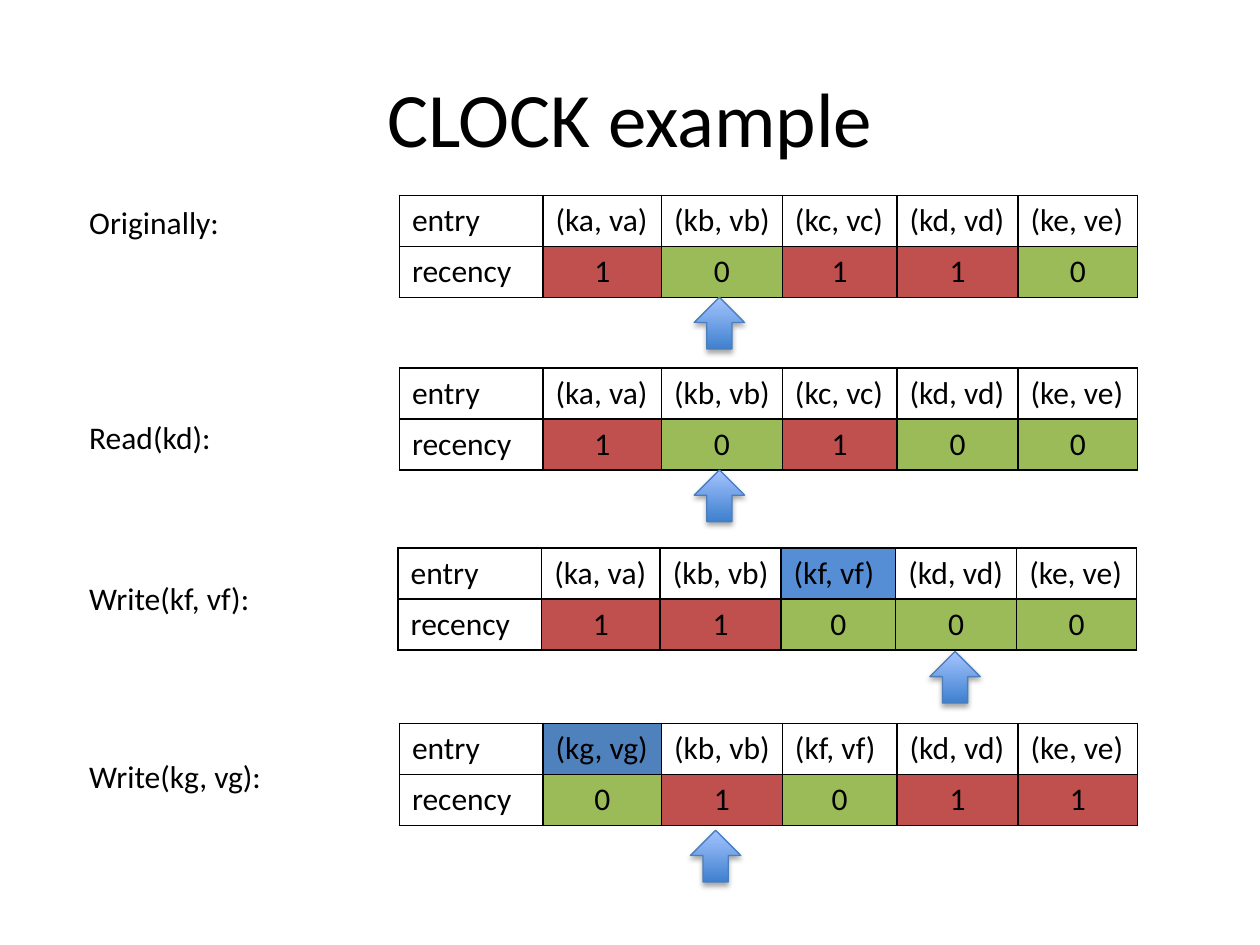
from lxml import etree
from pptx import Presentation
from pptx import util as u
from pptx.dml import color
from pptx.enum import shapes, text
from pptx.oxml import ns

# Content: step label, label top, table corner, entries, recency bits,
# index of the newly written entry with its fill, and pointer corner
STEPS = [
    ("Originally:", 1.56, (3.17, 1.55), "abcde", "10110", None, (5.51, 2.36)),
    ("Read(kd):", 3.27, (3.17, 2.92), "abcde", "10100", None, (5.51, 3.73)),
    ("Write(kf, vf):", 4.55, (3.16, 4.35), "abfde", "11000", (2, "558ED5"), (7.38, 5.17)),
    ("Write(kg, vg):", 5.96, (3.17, 5.74), "gbfde", "01011", (0, "4F81BD"), (5.48, 6.59)),
]
LABEL_WIDTHS = [1.24, 1.19, 1.51, 1.59]
COLUMNS = [1.14, 0.94, 0.96, 0.91, 0.96, 0.95]
ROW_HEIGHT = 0.405
RECENCY_FILL = {"0": "9BBB59", "1": "C0504D"}
BLACK = "000000"


def rgb(value):
    return color.RGBColor.from_string(value)


def write(frame, words, size=18, align=text.PP_ALIGN.LEFT):
    para = frame.paragraphs[0]
    para.alignment = align
    span = para.add_run()
    span.text = words
    for name, value in {"name": "Calibri", "size": u.Pt(size), "bold": False}.items():
        setattr(span.font, name, value)
    span.font.color.rgb = rgb(BLACK)


def add_borders(cell):
    props = cell._tc.get_or_add_tcPr()
    for place, side in enumerate(("lnL", "lnR", "lnT", "lnB")):
        line = etree.fromstring(
            f'<a:{side} {ns.nsdecls("a")} w="12700"><a:solidFill>'
            f'<a:srgbClr val="{BLACK}"/></a:solidFill></a:{side}>')
        props.insert(place, line)


def add_cache(page, corner, letters, bits, written):
    rows = [["entry"] + [f"(k{c}, v{c})" for c in letters], ["recency", *bits]]
    frame = page.shapes.add_table(
        2, len(COLUMNS), *map(u.Inches, corner),
        u.Inches(sum(COLUMNS)), u.Inches(2 * ROW_HEIGHT))
    table = frame.table
    table.first_row = table.horz_banding = False
    for column, width in zip(table.columns, COLUMNS):
        column.width = u.Inches(width)
    for r, row in enumerate(rows):
        table.rows[r].height = u.Inches(ROW_HEIGHT)
        for c, words in enumerate(row):
            cell = table.cell(r, c)
            fill = RECENCY_FILL.get(words)
            align = text.PP_ALIGN.CENTER if fill else text.PP_ALIGN.LEFT
            if written and (r, c) == (0, written[0] + 1):
                fill = written[1]
            if fill:
                cell.fill.solid()
                cell.fill.fore_color.rgb = rgb(fill)
            else:
                cell.fill.background()
            write(cell.text_frame, words, align=align)
            add_borders(cell)


def add_label(page, words, top, width):
    box = page.shapes.add_textbox(*map(u.Inches, (0.61, top, width, 0.4)))
    box.text_frame.word_wrap = False
    box.text_frame.auto_size = text.MSO_AUTO_SIZE.SHAPE_TO_FIT_TEXT
    write(box.text_frame, words)


def add_pointer(page, corner):
    arrow = page.shapes.add_shape(
        shapes.MSO_SHAPE.UP_ARROW, *map(u.Inches, (*corner, 0.4, 0.41)))
    arrow.fill.gradient()
    arrow.fill.gradient_angle = 90
    for stop, place, value in zip(arrow.fill.gradient_stops, (0, 1), ("3F80CE", "A4C4FF")):
        stop.position = place
        stop.color.rgb = rgb(value)
    arrow.line.color.rgb = rgb("4B7EBC")
    arrow.line.width = u.Pt(0.75)
    # Soft shadow just below the arrow
    arrow.shadow.inherit = False
    effects = arrow._element.spPr.find(ns.qn("a:effectLst"))
    effects.append(etree.fromstring(
        f'<a:outerShdw {ns.nsdecls("a")} blurRad="{u.Pt(3.1)}" dist="{u.Pt(1.8)}" '
        f'dir="5400000" rotWithShape="0"><a:srgbClr val="{BLACK}">'
        '<a:alpha val="35000"/></a:srgbClr></a:outerShdw>'))


def main():
    deck = Presentation()
    deck.slide_width, deck.slide_height = u.Inches(10), u.Inches(7.5)
    page = deck.slides.add_slide(deck.slide_layouts[5])

    # Title
    title = page.shapes.title
    for name, value in {"left": 0.5, "top": 0.3, "width": 9, "height": 1.25}.items():
        setattr(title, name, u.Inches(value))
    title.text_frame.vertical_anchor = text.MSO_ANCHOR.MIDDLE
    write(title.text_frame, "CLOCK example", 44, text.PP_ALIGN.CENTER)

    # One labelled cache state per step
    for step, width in zip(STEPS, LABEL_WIDTHS):
        words, top, corner, letters, bits, written, pointer = step
        add_label(page, words, top, width)
        add_cache(page, corner, letters, bits, written)
        add_pointer(page, pointer)

    deck.save("out.pptx")


if __name__ == "__main__":
    main()
